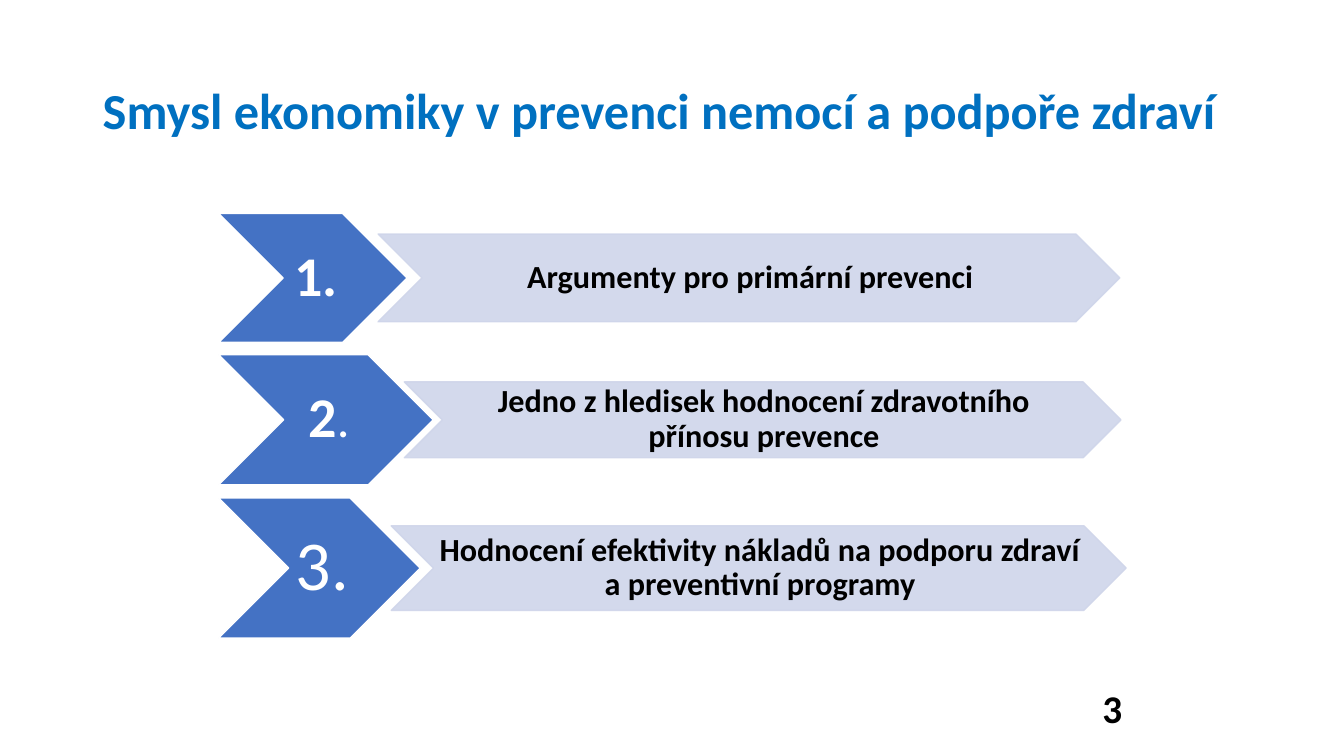
from pptx import Presentation
from pptx.dml.color import RGBColor
from pptx.enum.shapes import MSO_SHAPE as Shape
from pptx.enum.text import MSO_ANCHOR as Anchor, PP_ALIGN as Align
from pptx.oxml.ns import qn
from pptx.util import Cm, Pt
from lxml.etree import SubElement

COLORS = {"title": "0070C0", "number": "4472C4", "bar": "CFD5EA",
          "white": "FFFFFF", "black": "000000"}
ROWS = [
    (5.38, 4.75, 3.25, [("1.", 40, True)],
     9.53, 18.69, 2.21, "Argumenty pro primární prevenci"),
    (8.94, 5.41, 3.28, [("2", 40, True), (".", 36, False)],
     10.19, 18.06, 1.91, "Jedno z hledisek hodnocení zdravotního přínosu prevence"),
    (12.55, 5.08, 3.53, [("3.", 50, False)],
     9.86, 18.52, 2.13, "Hodnocení efektivity nákladů na podporu zdraví a preventivní programy"),
]
NUMBER_LEFT = 5.51


def write(box, spans, color, align=Align.LEFT, spacing=0.9):
    para = box.text_frame.paragraphs[0]
    para.alignment = align
    para.line_spacing = spacing
    para.font.name = "Calibri"
    para.font.color.rgb = RGBColor.from_string(COLORS[color])
    for text, size, bold in spans:
        span = para.add_run()
        span.text = text
        span.font.size = Pt(size)
        span.font.bold = bold


def add_chevron(left, top, width, height, fill, line, insets):
    chevron = page.shapes.add_shape(Shape.CHEVRON, Cm(left), Cm(top), Cm(width), Cm(height))
    chevron.shadow.inherit = False
    chevron.fill.solid()
    chevron.fill.fore_color.rgb = RGBColor.from_string(COLORS[fill])
    chevron.line.color.rgb = RGBColor.from_string(COLORS[line])
    chevron.line.width = Pt(1)
    frame = chevron.text_frame
    frame.vertical_anchor = Anchor.MIDDLE
    frame.margin_left, frame.margin_right = Cm(insets[0]), 0
    frame.margin_top = frame.margin_bottom = Cm(insets[1])
    return chevron


deck = Presentation()
deck.slide_width, deck.slide_height = Cm(33.87), Cm(19.05)
page = deck.slides.add_slide(deck.slide_layouts[6])

title = page.shapes.add_textbox(Cm(2.34), Cm(1.02), Cm(29.21), Cm(3.68))
title.text_frame.word_wrap = True
title.text_frame.vertical_anchor = Anchor.MIDDLE
write(title, [("Smysl ekonomiky v prevenci nemocí a podpoře zdraví", 36, True)], "title")

for top, width, height, number, bar_left, bar_width, bar_height, text in ROWS:
    marker = add_chevron(NUMBER_LEFT, top, width, height, "number", "white", (0.16, 0.08))
    marker.text_frame.word_wrap = False
    write(marker, number, "white", Align.CENTER)

    bar_top = top + (height - bar_height) / 2
    bar = add_chevron(bar_left, bar_top, bar_width, bar_height, "bar", "bar", (0.08, 0.05))
    bar.text_frame.word_wrap = True
    for tint in bar._element.spPr.iter(qn("a:srgbClr")):
        SubElement(tint, qn("a:alpha"), val="90000")
    write(bar, [(text, 23, True)], "black", Align.CENTER)

page_number = page.shapes.add_textbox(Cm(27.53), Cm(17.12), Cm(1.4), Cm(1.45))
page_number.text_frame.word_wrap = True
write(page_number, [("3", 28, True)], "black", spacing=1.0)

deck.save("out.pptx")
